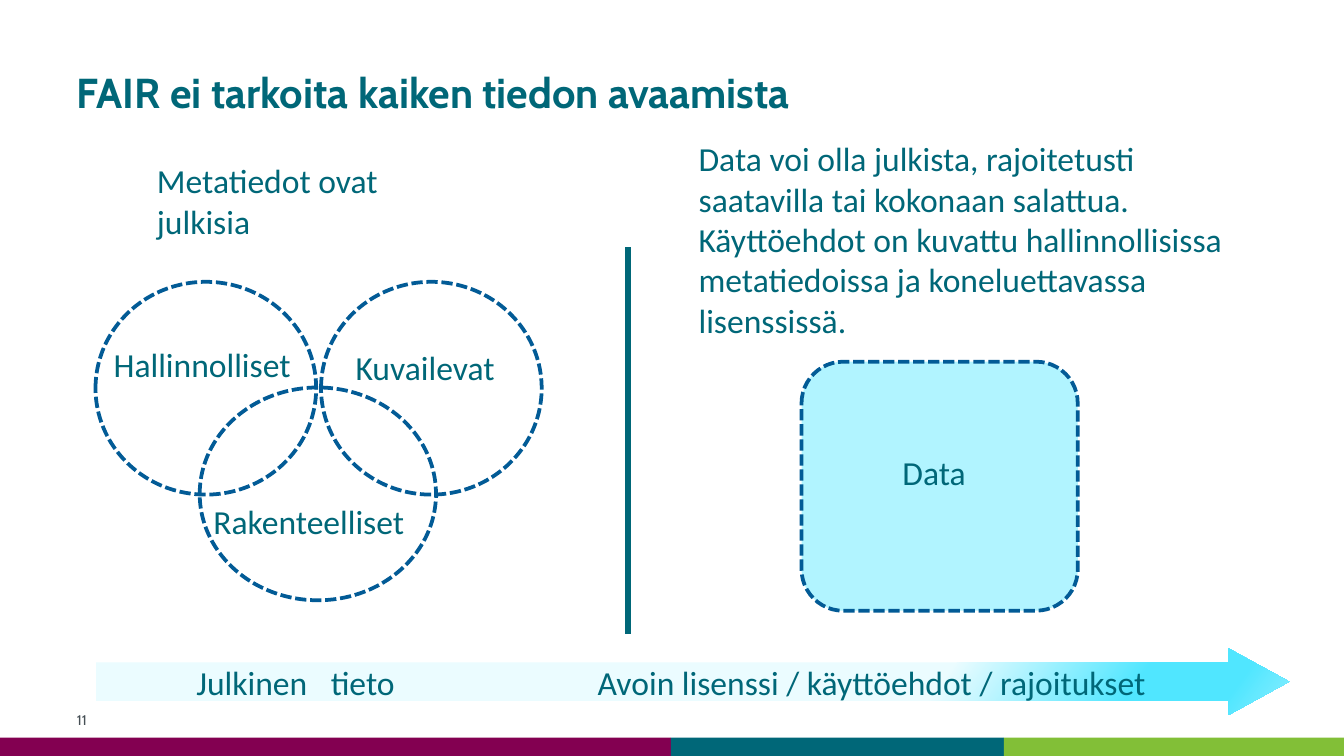
from lxml import etree
from pptx import Presentation
from pptx.dml.color import RGBColor
from pptx.enum.dml import MSO_LINE
from pptx.enum.shapes import MSO_CONNECTOR, MSO_SHAPE
from pptx.enum.text import MSO_ANCHOR, PP_ALIGN
from pptx.oxml.ns import qn
from pptx.util import Pt

RECTANGLE, OVAL = MSO_SHAPE.RECTANGLE, MSO_SHAPE.OVAL
ROUNDED, ARROW = MSO_SHAPE.ROUNDED_RECTANGLE, MSO_SHAPE.RIGHT_ARROW
TOP, MIDDLE, LEFT = MSO_ANCHOR.TOP, MSO_ANCHOR.MIDDLE, PP_ALIGN.LEFT

COLORS = {
    "teal": "006778", "green": "82BF37", "plum": "830051", "grey": "464F55",
    "outline": "025B96", "data": "B1F4FF",
}
HEADING_FONT, BODY_FONT = "Cabin", "Calibri"
BODY_SIZE = 18

# Content: boxes are left, top, width, height in points
TITLE = "FAIR ei tarkoita kaiken tiedon avaamista"
PAGE_NUMBER = "11"
FOOTER_BARS = [("plum", 0, 359.4), ("teal", 359.4, 178.4), ("green", 537.8, 182.2)]
DASHED_SHAPES = [
    (OVAL, (172, 151, 118.2, 114), None),
    (OVAL, (51.2, 151, 118.2, 114), None),
    (OVAL, (107, 207.6, 126.6, 114), None),
    (ROUNDED, (429.4, 193.8, 148, 133.4), "data"),
]
LABELS = [
    (["Hallinnolliset"], (53.8, 180.8, 117.4, 39), False),
    (["Kuvailevat"], (183.4, 182.4, 94.6, 29), True),
    (["Rakenteelliset"], (107.2, 264.6, 123, 29), False),
    (["Metatiedot ovat julkisia"], (77, 82.4, 183.6, 50.8), True),
    (["Data voi olla julkista, rajoitetusti saatavilla tai kokonaan salattua.",
      "Käyttöehdot on kuvattu hallinnollisissa metatiedoissa ja koneluettavassa lisenssissä."],
     (367.2, 70.6, 318.4, 116.4), True),
    (["Data"], (476.4, 238.6, 51.2, 29), False),
]
ARROW_TEXT = ["Julkinen", "tieto", "Avoin lisenssi / käyttöehdot / rajoitukset"]
ARROW_TABS = [72, 215]
ARROW_STOPS = [(70, "EBFCFF"), (86, "50E6FF"), (94, "50E6FF"), (100, "8AEEFF")]


def color(name):
    return RGBColor.from_string(COLORS[name])


def points(box):
    return [Pt(value) for value in box]


def write(frame, texts, size, font, color_name, bold=False):
    for index, text in enumerate(texts):
        paragraph = frame.paragraphs[0] if index == 0 else frame.add_paragraph()
        paragraph.alignment = LEFT
        run = paragraph.add_run()
        run.text = text
        run.font.size, run.font.name, run.font.bold = Pt(size), font, bold
        run.font.color.rgb = color(color_name)


def set_frame(frame, anchor, horizontal, vertical, wrap=True):
    frame.word_wrap = wrap
    frame.vertical_anchor = anchor
    frame.margin_left = frame.margin_right = Pt(horizontal)
    frame.margin_top = frame.margin_bottom = Pt(vertical)


def add_shape(slide, kind, box, fill=None, dashed=False):
    shape = slide.shapes.add_shape(kind, *points(box))
    shape.shadow.inherit = False
    if fill:
        shape.fill.solid()
        shape.fill.fore_color.rgb = color(fill)
    else:
        shape.fill.background()
    if dashed:
        shape.line.color.rgb = color("outline")
        shape.line.width = Pt(2)
        shape.line.dash_style = MSO_LINE.SQUARE_DOT
    else:
        shape.line.fill.background()
    return shape


def set_gradient(shape, stops, angle):
    shape.fill.gradient()
    shape.fill.gradient_angle = 360 - angle
    stop_list = shape._element.spPr.find(qn("a:gradFill")).find(qn("a:gsLst"))
    for old_stop in list(stop_list):
        stop_list.remove(old_stop)
    for position, value in stops:
        stop = etree.SubElement(stop_list, qn("a:gs"), pos=str(position * 1000))
        etree.SubElement(stop, qn("a:srgbClr"), val=value)


def add_tabs(paragraph, positions):
    tab_list = etree.SubElement(paragraph._p.get_or_add_pPr(), qn("a:tabLst"))
    for position in positions:
        etree.SubElement(tab_list, qn("a:tab"), pos=str(Pt(position)), algn="l")


def main():
    presentation = Presentation()
    presentation.slide_width, presentation.slide_height = Pt(720), Pt(405)
    slide = presentation.slides.add_slide(presentation.slide_layouts[5])

    # Footer bars and page number
    for name, left, width in FOOTER_BARS:
        add_shape(slide, RECTANGLE, (left, 395.2, width, 9.8), name)
    number = slide.shapes.add_textbox(*points((36, 376.6, 51, 18.6)))
    set_frame(number.text_frame, MIDDLE, 5.2, 2.6)
    write(number.text_frame, [PAGE_NUMBER], 7.5, HEADING_FONT, "grey")

    # Title
    title = slide.shapes.title
    title.left, title.top, title.width, title.height = points((36, 15.2, 609.8, 67.6))
    set_frame(title.text_frame, MIDDLE, 5.2, 2.6)
    write(title.text_frame, [TITLE], 22.4, HEADING_FONT, "teal", bold=True)

    # Metadata circles and data box
    for kind, box, fill in DASHED_SHAPES:
        add_shape(slide, kind, box, fill, dashed=True)

    # Divider
    divider = slide.shapes.add_connector(
        MSO_CONNECTOR.STRAIGHT, *points((336.4, 132.4, 336.4, 339.6)))
    divider.line.color.rgb = color("teal")
    divider.line.width = Pt(3)
    etree.SubElement(divider._element.spPr, qn("a:effectLst"))

    # Labels and explanations
    for texts, box, wrap in LABELS:
        label = slide.shapes.add_textbox(*points(box))
        set_frame(label.text_frame, TOP, 7.2, 3.6, wrap)
        write(label.text_frame, texts, BODY_SIZE, BODY_FONT, "teal")

    # Openness arrow
    arrow = add_shape(slide, ARROW, (51.2, 347.4, 639.4, 35.6))
    arrow.adjustments[0], arrow.adjustments[1] = 0.58, 0.91
    set_gradient(arrow, ARROW_STOPS, 36)
    set_frame(arrow.text_frame, MIDDLE, 7.2, 3.6)
    arrow.text_frame.margin_left = Pt(54)
    add_tabs(arrow.text_frame.paragraphs[0], ARROW_TABS)
    write(arrow.text_frame, ["\t".join(ARROW_TEXT)], BODY_SIZE, BODY_FONT, "teal")

    presentation.save("out.pptx")


if __name__ == "__main__":
    main()
